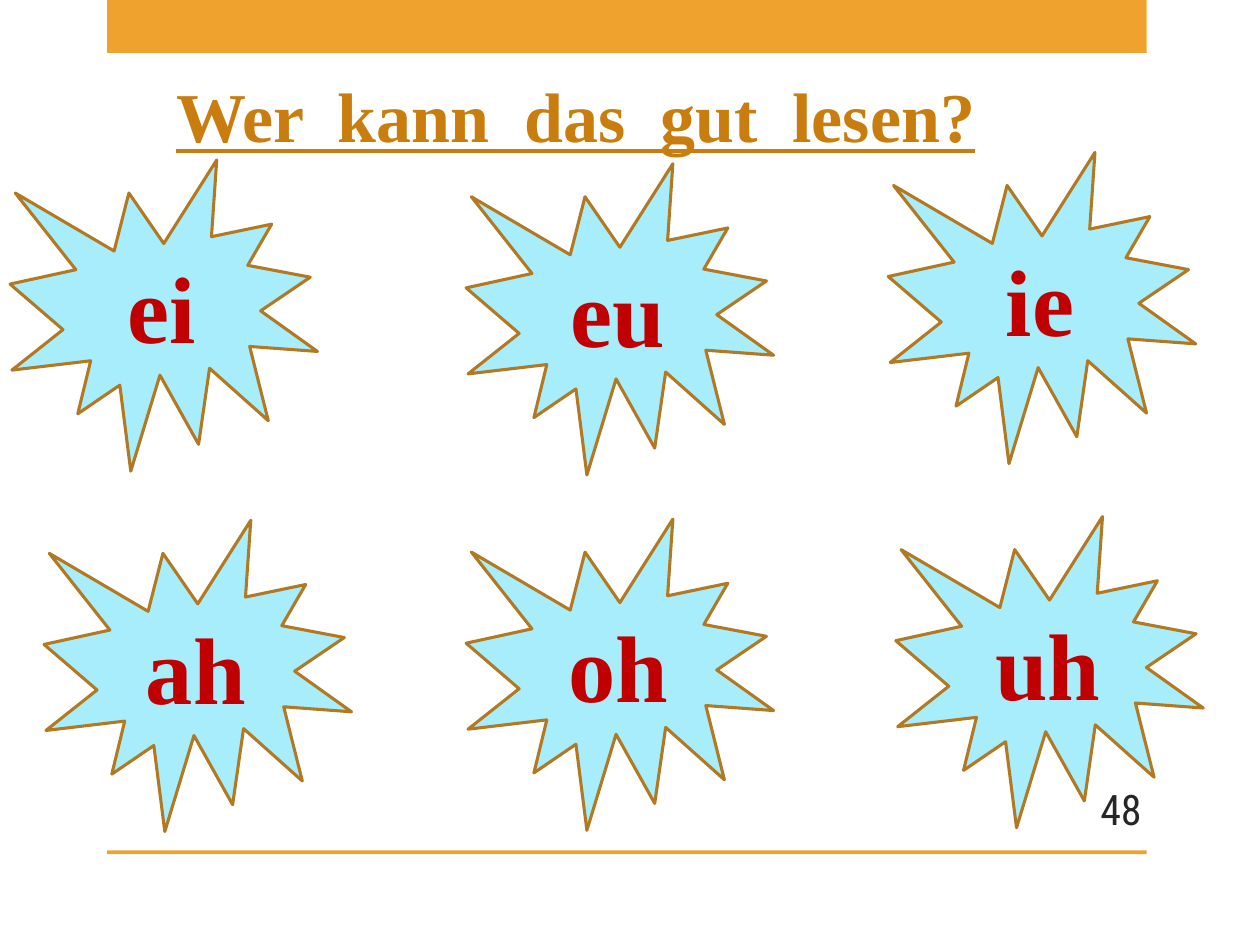
"""Build a reading-practice slide with six syllable stars."""
from typing import NamedTuple

from pptx import Presentation
from pptx.dml.color import RGBColor
from pptx.enum.shapes import MSO_SHAPE
from pptx.enum.text import MSO_ANCHOR, PP_ALIGN
from pptx.util import Pt

PX = 9144
SERIF = "Times New Roman"
ORANGE = "F0A22E"


class Box(NamedTuple):
    """Place and size in px, 100 to the inch."""
    left: int
    top: int
    width: int
    height: int

    def emu(self) -> list[int]:
        """Return the four lengths in EMU."""
        return [n * PX for n in self]


class Style(NamedTuple):
    """Look of a line of text."""
    size: int
    font: str
    color: str
    bold: bool = False
    under: bool = False
    align: PP_ALIGN = PP_ALIGN.LEFT
    anchor: MSO_ANCHOR = MSO_ANCHOR.MIDDLE


class Star(NamedTuple):
    """A syllable and the corner of its star."""
    text: str
    left: int
    top: int


TITLE = Style(40, SERIF, "C87D0E", True, True, anchor=MSO_ANCHOR.TOP)
NUMBER = Style(24, "Roboto Condensed", "262626", align=PP_ALIGN.RIGHT)
SOUND = Style(54, SERIF, "C00000", True, align=PP_ALIGN.CENTER)
BARS = [Box(85, 0, 825, 42), Box(85, 675, 825, 3)]
STARS = [
    Star("ei", 8, 127), Star("eu", 370, 130), Star("ie", 705, 121),
    Star("ah", 35, 413), Star("oh", 370, 412), Star("uh", 711, 410),
]


def rgb(code: str) -> RGBColor:
    """Turn a hex string into a colour."""
    return RGBColor.from_string(code)


def write(shape, text: str, style: Style) -> None:
    """Put one styled line of text into a shape."""
    frame = shape.text_frame
    frame.word_wrap = True
    frame.vertical_anchor = style.anchor
    line = frame.paragraphs[0]
    line.text = text
    line.alignment = style.align
    font = line.font
    font.size = Pt(style.size)
    font.name = style.font
    font.bold = style.bold
    font.underline = style.under
    font.color.rgb = rgb(style.color)


def draw(slide, kind: MSO_SHAPE, box: Box, fill: str):
    """Add a filled shape without outline or shadow."""
    shape = slide.shapes.add_shape(kind, *box.emu())
    shape.shadow.inherit = False
    shape.fill.solid()
    shape.fill.fore_color.rgb = rgb(fill)
    shape.line.fill.background()
    return shape


def label(slide, box: Box, text: str, style: Style) -> None:
    """Add a text box."""
    write(slide.shapes.add_textbox(*box.emu()), text, style)


def burst(slide, star: Star) -> None:
    """Add one outlined star with its syllable."""
    box = Box(star.left, star.top, 244, 247)
    shape = draw(slide, MSO_SHAPE.EXPLOSION1, box, "A7EDFB")
    shape.line.color.rgb = rgb("B27822")
    shape.line.width = Pt(1.75)
    write(shape, star.text, SOUND)


def main() -> None:
    """Build and save the slide."""
    deck = Presentation()
    deck.slide_width, deck.slide_height = 1000 * PX, 750 * PX
    slide = deck.slides.add_slide(deck.slide_layouts[6])
    for bar in BARS:
        draw(slide, MSO_SHAPE.RECTANGLE, bar, ORANGE)
    label(slide, Box(130, 53, 724, 77), "Wer  kann  das  gut  lesen?", TITLE)
    label(slide, Box(833, 622, 83, 40), "48", NUMBER)
    for star in STARS:
        burst(slide, star)
    deck.save("out.pptx")


if __name__ == "__main__":
    main()
